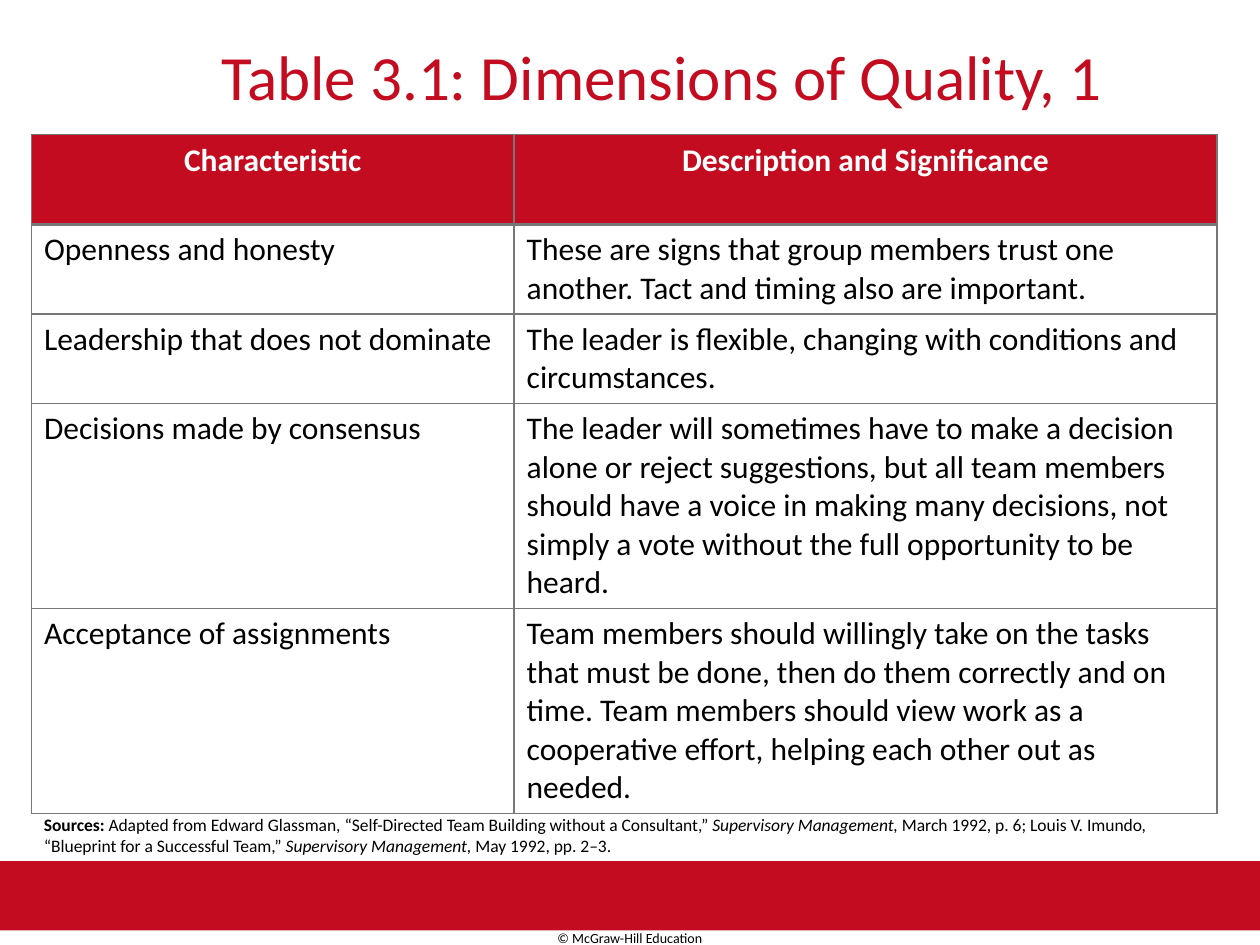
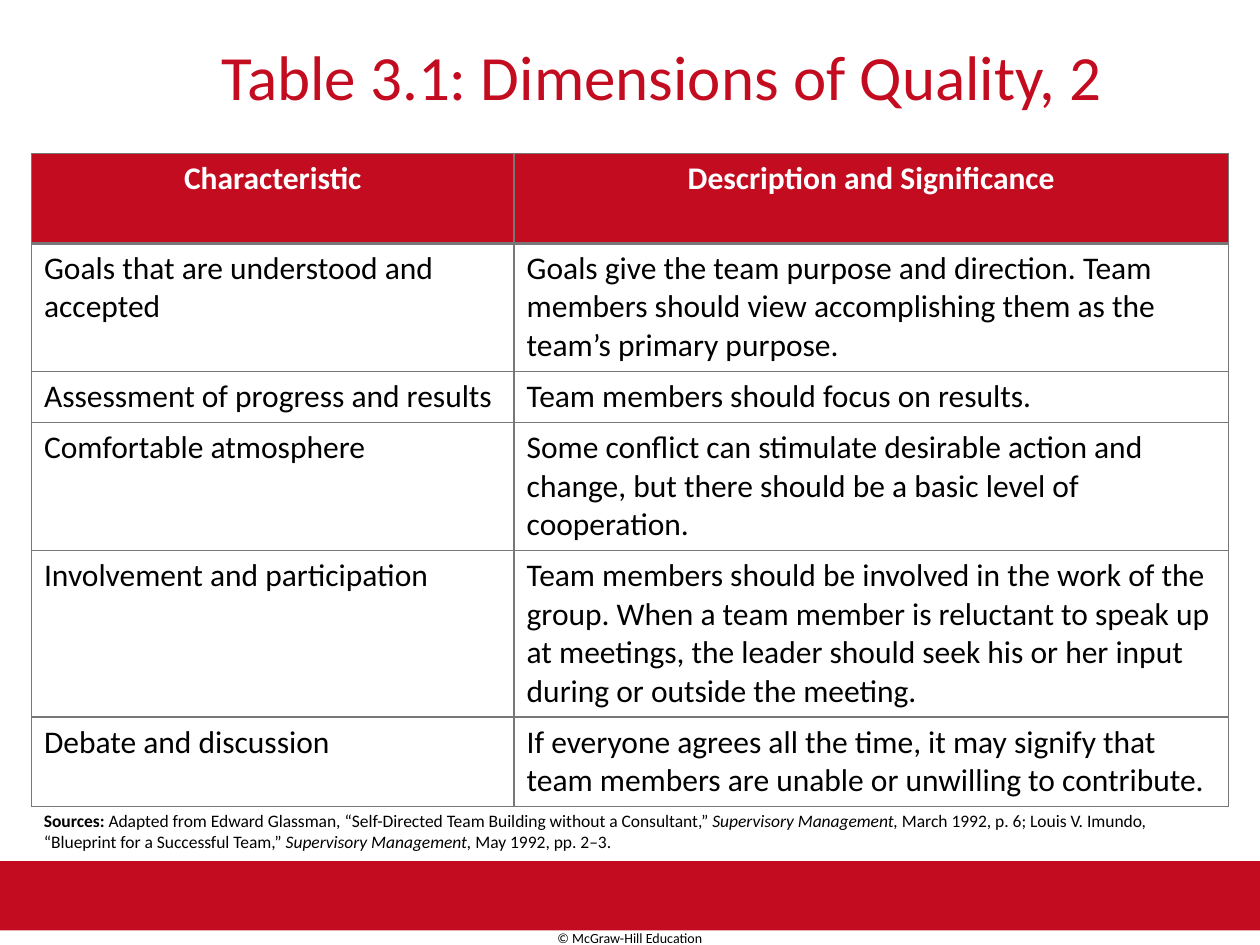
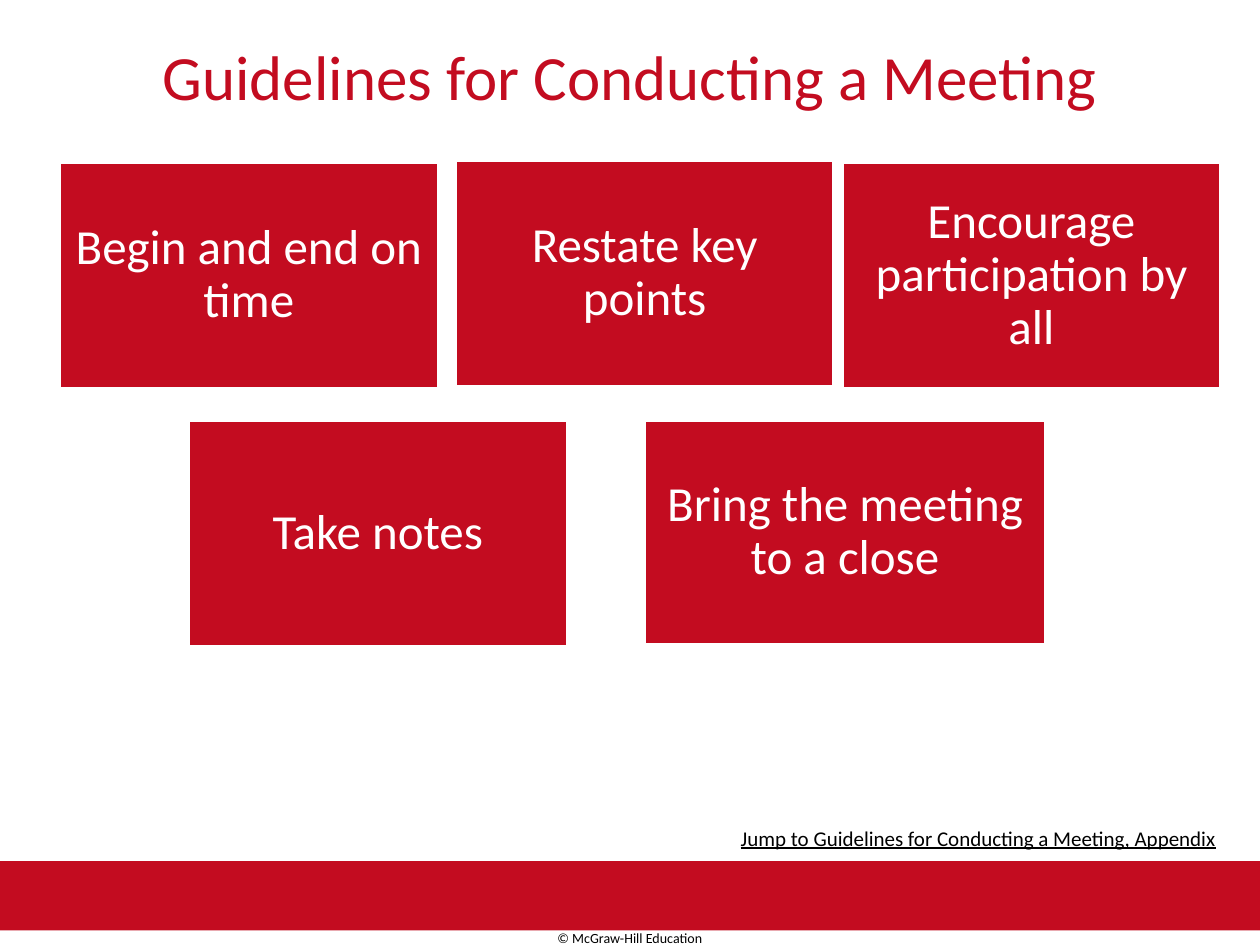
from lxml import etree
from pptx import Presentation
from pptx.dml.color import RGBColor
from pptx.enum import shapes, text
from pptx.oxml import ns
from pptx.util import Pt

COLORS = {"red": "C30C20", "white": "FFFFFF", "black": "000000", "border": "777777"}
FONT = "Calibri"
WIDTH, HEIGHT = 720, 540
MARGIN = 18
LINE_HEIGHT = 22
CELL_PADDING = 7.2
CARD_WIDTH, CARD_HEIGHT = 216.7, 129.6
CENTER, RIGHT = text.PP_ALIGN.CENTER, text.PP_ALIGN.RIGHT
TOP, MIDDLE = text.MSO_ANCHOR.TOP, text.MSO_ANCHOR.MIDDLE

HEADER = ("Characteristic", "Description and Significance")
SOURCES = [
    ("Sources: ", "bold"),
    ("Adapted from Edward Glassman, “Self-Directed Team Building without a Consultant,” ", None),
    ("Supervisory Management, ", "italic"),
    ("March 1992, p. 6; Louis V. Imundo, “Blueprint for a Successful Team,” ", None),
    ("Supervisory Management, ", "italic"),
    ("May 1992, pp. 2–3.", None),
]

QUALITY_1 = [
    ("Openness and honesty",
     "These are signs that group members trust one another. Tact and timing also are important.", 2),
    ("Leadership that does not dominate",
     "The leader is flexible, changing with conditions and circumstances.", 2),
    ("Decisions made by consensus",
     "The leader will sometimes have to make a decision alone or reject suggestions, but all team "
     "members should have a voice in making many decisions, not simply a vote without the full "
     "opportunity to be heard.", 5),
    ("Acceptance of assignments",
     "Team members should willingly take on the tasks that must be done, then do them correctly and "
     "on time. Team members should view work as a cooperative effort, helping each other out as "
     "needed.", 5),
]
QUALITY_2 = [
    ("Goals that are understood and accepted",
     "Goals give the team purpose and direction. Team members should view accomplishing them as "
     "the team’s primary purpose.", 3),
    ("Assessment of progress and results", "Team members should focus on results.", 1),
    ("Comfortable atmosphere",
     "Some conflict can stimulate desirable action and change, but there should be a basic level of "
     "cooperation.", 3),
    ("Involvement and participation",
     "Team members should be involved in the work of the group. When a team member is reluctant to "
     "speak up at meetings, the leader should seek his or her input during or outside the "
     "meeting.", 4),
    ("Debate and discussion",
     "If everyone agrees all the time, it may signify that team members are unable or unwilling to "
     "contribute.", 2),
]
GUIDELINES = [
    ("Begin and end on time", 33.8, 92.5, CARD_WIDTH, CARD_HEIGHT),
    ("Restate key points", 260, 91.5, CARD_WIDTH, CARD_HEIGHT),
    ("Encourage participation by all", 481, 92.5, CARD_WIDTH, CARD_HEIGHT),
    ("Take notes", 107.5, 240, CARD_WIDTH, CARD_HEIGHT),
    ("Bring the meeting to a close", 368, 240, 229.7, 128.2),
]


def color(name):
    return RGBColor.from_string(COLORS[name])


def style(paragraph, size, color_name="black", align=None, bold=None):
    paragraph.alignment = align
    paragraph.font.name = FONT
    paragraph.font.size = Pt(size)
    paragraph.font.bold = bold
    paragraph.font.color.rgb = color(color_name)


def add_text(slide, box, words, size, color_name="black", align=None, anchor=TOP):
    shape = slide.shapes.add_textbox(*map(Pt, box))
    frame = shape.text_frame
    frame.word_wrap = True
    frame.vertical_anchor = anchor
    paragraph = frame.paragraphs[0]
    paragraph.text = words
    style(paragraph, size, color_name, align)
    return shape


def add_rectangle(slide, box):
    shape = slide.shapes.add_shape(shapes.MSO_SHAPE.RECTANGLE, *map(Pt, box))
    shape.shadow.inherit = False
    shape.fill.solid()
    shape.fill.fore_color.rgb = color("red")
    shape.line.fill.background()
    return shape


def add_base_slide(presentation, title, indent=0):
    slide = presentation.slides.add_slide(presentation.slide_layouts[6])
    add_rectangle(slide, (0, 492, WIDTH, 39.6))
    add_text(slide, (180, 527.8, 360, 17.3), "© McGraw-Hill Education", 8, align=CENTER)
    heading = add_text(slide, (0, 18, WIDTH, 48.2), title, 36, "red", CENTER)
    heading.text_frame.margin_left = Pt(7.2 + indent)
    return slide


def add_borders(cell, widths):
    properties = cell._tc.get_or_add_tcPr()
    for side, width in zip(("lnL", "lnR", "lnT", "lnB"), widths):
        line = etree.SubElement(properties, ns.qn(f"a:{side}"), w=str(Pt(width)))
        fill = etree.SubElement(line, ns.qn("a:solidFill"))
        etree.SubElement(fill, ns.qn("a:srgbClr"), val=COLORS["border"])


def add_quality_table(slide, left, top, column_widths, entries):
    rows = [(*HEADER, 2), *entries]
    heights = [lines * LINE_HEIGHT + CELL_PADDING for *_, lines in rows]
    frame = slide.shapes.add_table(len(rows), 2, Pt(left), Pt(top),
                                   Pt(sum(column_widths)), Pt(sum(heights)))
    table = frame.table
    table.horz_banding = False
    for column, width in zip(table.columns, column_widths):
        column.width = Pt(width)
    for index, (row, height) in enumerate(zip(rows, heights)):
        table.rows[index].height = Pt(height)
        is_header = index == 0
        for cell, words in zip(table.rows[index].cells, row[:2]):
            cell.text = words
            add_borders(cell, (1, 1, 2 if index == 1 else 1, 2 if is_header else 1))
            paragraph = cell.text_frame.paragraphs[0]
            if is_header:
                cell.fill.solid()
                cell.fill.fore_color.rgb = color("red")
                style(paragraph, 18, "white", CENTER, True)
            else:
                cell.fill.background()
                style(paragraph, 18, bold=False)


def add_sources(slide, left, top):
    shape = add_text(slide, (left, top, WIDTH - 2 * left, 23.8), "", 10, anchor=MIDDLE)
    paragraph = shape.text_frame.paragraphs[0]
    for words, emphasis in SOURCES:
        run = paragraph.add_run()
        run.text = words
        if emphasis == "bold":
            run.font.bold = True
        elif emphasis == "italic":
            run.font.italic = True


def add_quality_slide(presentation, number, table_top, description_width, entries, sources_top):
    slide = add_base_slide(presentation, f"Table 3.1: Dimensions of Quality, {number}", indent=36)
    add_quality_table(slide, MARGIN, table_top, (275.8, description_width), entries)
    add_sources(slide, MARGIN, sources_top)


def add_card(slide, words, *box):
    card = add_rectangle(slide, box)
    card.line.color.rgb = color("white")
    card.line.width = Pt(2)
    frame = card.text_frame
    frame.word_wrap = True
    frame.vertical_anchor = MIDDLE
    frame.margin_left = frame.margin_right = frame.margin_top = frame.margin_bottom = Pt(8.4)
    paragraph = frame.paragraphs[0]
    paragraph.text = words
    paragraph.line_spacing = 0.9
    style(paragraph, 28, "white", CENTER)


def add_guidelines_slide(presentation):
    slide = add_base_slide(presentation, "Guidelines for Conducting a Meeting")
    for guideline in GUIDELINES:
        add_card(slide, *guideline)
    jump = add_text(slide, (54, 468, 648, 23.8),
                    "Jump to Guidelines for Conducting a Meeting, Appendix", 12, align=RIGHT)
    jump.text_frame.paragraphs[0].font.underline = True


def main():
    presentation = Presentation()
    presentation.slide_width, presentation.slide_height = Pt(WIDTH), Pt(HEIGHT)
    add_quality_slide(presentation, 1, 77, 401.8, QUALITY_1, 465)
    add_quality_slide(presentation, 2, 87.8, 408.2, QUALITY_2, 463)
    add_guidelines_slide(presentation)
    presentation.save("out.pptx")


if __name__ == "__main__":
    main()
